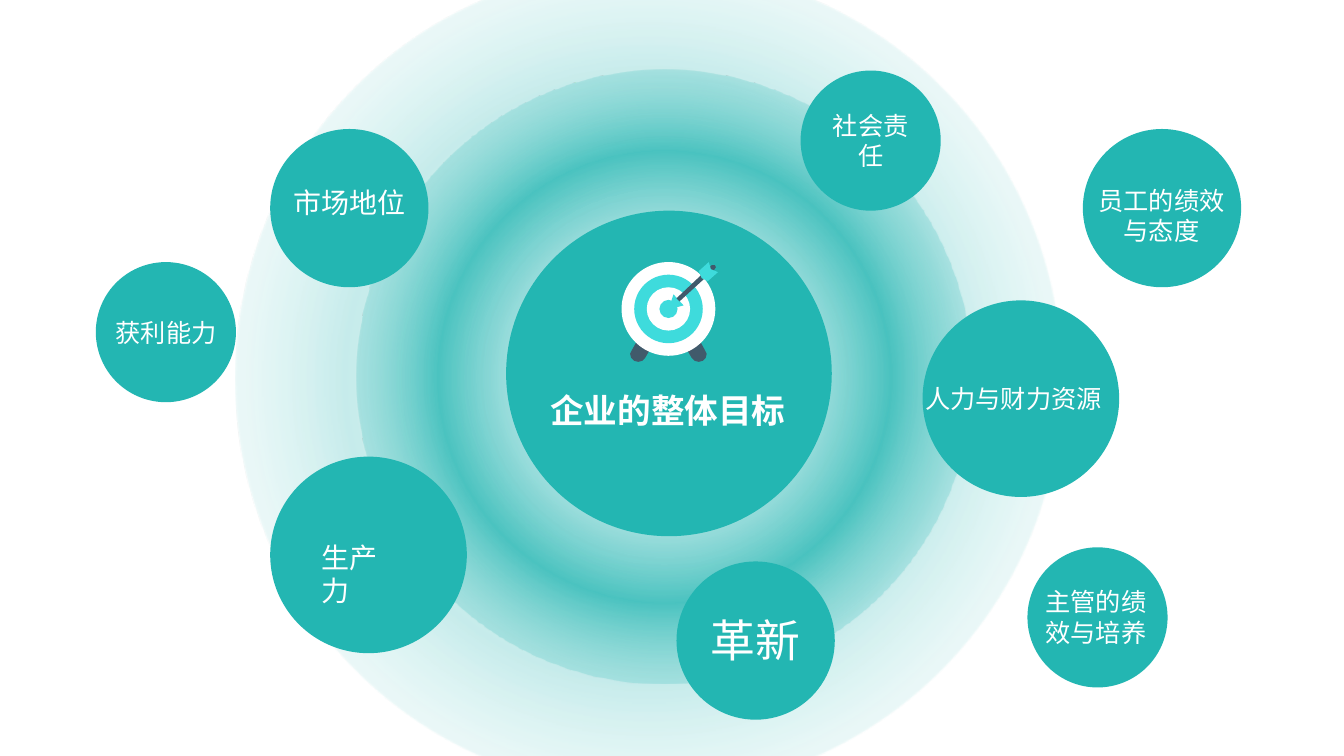
"""Build a slide of satellite goals around a company's overall objective."""
from dataclasses import dataclass
from typing import Optional

from pptx import Presentation
from pptx.dml.color import RGBColor
from pptx.enum.shapes import MSO_SHAPE
from pptx.enum.text import MSO_ANCHOR, MSO_AUTO_SIZE, PP_ALIGN
from pptx.oxml import parse_xml
from pptx.oxml.ns import nsdecls, qn
from pptx.shapes.autoshape import Shape
from pptx.shapes.shapetree import GroupShapes, SlideShapes
from pptx.text.text import TextFrame
from pptx.util import Inches, Pt

OVAL = MSO_SHAPE.OVAL
MIDDLE = MSO_ANCHOR.MIDDLE
FIT_SHAPE = MSO_AUTO_SIZE.SHAPE_TO_FIT_TEXT
LEFT, CENTER = PP_ALIGN.LEFT, PP_ALIGN.CENTER

Point = tuple[float, float]
Box = tuple[float, float, float, float]


@dataclass(frozen=True)
class Theme:
    """Colours, font and type sizes of the slide."""
    teal: str = "23B6B2"
    aqua: str = "3EDBDC"
    slate: str = "415A6B"
    white: str = "FFFFFF"
    mist: str = "F7FAFD"
    font: str = "Noto Sans CJK SC"
    title: int = 24
    accent: int = 32
    label: int = 20
    small: int = 18
    line_height: float = 1.2


THEME = Theme()


@dataclass(frozen=True)
class Halo:
    """A glowing ring behind the goals."""
    left: float
    top: float
    diameter: float
    glow: int


@dataclass(frozen=True)
class Goal:
    """A circle and its label, placed inside it when no box is given."""
    text: str
    left: float
    top: float
    diameter: float
    size: int
    box: Optional[Box] = None
    wrap: bool = False
    align: PP_ALIGN = LEFT
    bold: bool = False


HALOS = [Halo(2.34, -0.34, 8.19, 25), Halo(3.54, 0.69, 6.09, 78)]

GOALS = [
    Goal("企业的整体目标", 5.02, 2.09, 3.23, THEME.title, (5.36, 3.82, 2.54, 0.5), bold=True),
    Goal("市场地位", 2.68, 1.28, 1.57, THEME.label, (2.81, 1.79, 1.31, 0.44)),
    Goal("革新", 6.71, 5.57, 1.57, THEME.accent, (6.95, 6.03, 1.09, 0.64)),
    Goal("生产力", 2.68, 4.53, 1.95, THEME.label, (3.09, 5.31, 1.03, 0.44)),
    Goal("人力与财力资源", 9.15, 2.98, 1.95, THEME.small, (9.08, 3.75, 2.1, 0.4), wrap=True),
    Goal("社会责任", 7.94, 0.7, 1.39, THEME.small, wrap=True, align=CENTER),
    Goal("获利能力", 0.95, 2.6, 1.39, THEME.small, (1.05, 3.1, 1.2, 0.4)),
    Goal("主管的绩效与培养", 10.19, 5.43, 1.39, THEME.small, (10.27, 5.77, 1.22, 0.71), wrap=True),
    Goal("员工的绩效与态度", 10.74, 1.28, 1.57, THEME.small, (10.79, 1.79, 1.46, 0.71),
         wrap=True, align=CENTER),
]

TARGET_X, TARGET_Y = 6.63, 3.065
TARGET_RINGS = [(0.93, THEME.white), (0.68, THEME.aqua), (0.43, THEME.white), (0.18, THEME.aqua)]
LEG = [(6.33, 3.59), (6.29, 3.58), (6.26, 3.55), (6.25, 3.51), (6.27, 3.47),
       (6.43, 3.18), (6.61, 3.18), (6.4, 3.55), (6.37, 3.58)]
DART_TIP = [(6.68, 2.92), (6.63, 3.07), (6.78, 3.03)]
DART_SHAFT = [(6.74, 2.99), (7.09, 2.67), (7.1, 2.65), (7.09, 2.63), (7.06, 2.63), (6.71, 2.96)]
DART_FLIGHT = [(6.96, 2.76), (7.02, 2.79), (7.12, 2.7), (7.05, 2.67), (7.03, 2.6), (6.93, 2.69)]


def paint(shape: Shape, color: str) -> None:
    """Give a shape a flat fill with no outline or shadow."""
    shape.fill.solid()
    shape.fill.fore_color.rgb = RGBColor.from_string(color)
    shape.line.fill.background()
    shape.shadow.inherit = False


def add_circle(shapes: SlideShapes | GroupShapes, left: float, top: float,
               diameter: float, color: str) -> Shape:
    """Draw a plain circle."""
    circle = shapes.add_shape(OVAL, Inches(left), Inches(top), Inches(diameter), Inches(diameter))
    paint(circle, color)
    return circle


def add_halo(shapes: SlideShapes, halo: Halo) -> None:
    """Draw a ring with a radial, partly transparent gradient."""
    ring = add_circle(shapes, halo.left, halo.top, halo.diameter, THEME.teal)
    stops = [(0, THEME.mist, 12), (52, THEME.teal, halo.glow), (97, THEME.white, 0)]
    stop_xml = "".join(
        f'<a:gs pos="{pos * 1000}"><a:srgbClr val="{color}">'
        f'<a:alpha val="{alpha * 1000}"/></a:srgbClr></a:gs>'
        for pos, color, alpha in stops)
    gradient = parse_xml(
        f'<a:gradFill {nsdecls("a")} rotWithShape="1"><a:gsLst>{stop_xml}</a:gsLst>'
        '<a:path path="circle"><a:fillToRect l="50000" t="50000" r="50000" b="50000"/></a:path>'
        '</a:gradFill>')
    properties = ring.element.spPr
    properties.replace(properties.find(qn("a:solidFill")), gradient)


def write_label(frame: TextFrame, goal: Goal) -> None:
    """Write and style a goal's label."""
    frame.word_wrap = goal.wrap
    paragraph = frame.paragraphs[0]
    paragraph.alignment = goal.align
    paragraph.line_spacing = Pt(goal.size * THEME.line_height)
    run = paragraph.add_run()
    run.text = goal.text
    font = run.font
    font.name = THEME.font
    font.size = Pt(goal.size)
    font.bold = goal.bold
    font.color.rgb = RGBColor.from_string(THEME.white)
    latin = run.font._element.find(qn("a:latin"))
    latin.addnext(parse_xml(f'<a:ea {nsdecls("a")} typeface="{THEME.font}"/>'))


def add_goal(shapes: SlideShapes, goal: Goal) -> None:
    """Draw a goal's circle and its label."""
    circle = add_circle(shapes, goal.left, goal.top, goal.diameter, THEME.teal)
    if goal.box is None:
        frame = circle.text_frame
        frame.vertical_anchor = MIDDLE
    else:
        frame = shapes.add_textbox(*map(Inches, goal.box)).text_frame
        frame.auto_size = FIT_SHAPE
    write_label(frame, goal)


def add_outline(shapes: GroupShapes, points: list[Point], color: str) -> None:
    """Draw a closed filled outline."""
    start, *rest = [(Inches(x), Inches(y)) for x, y in points]
    builder = shapes.build_freeform(*start)
    builder.add_line_segments(rest, close=True)
    paint(builder.convert_to_shape(), color)


def add_target(shapes: SlideShapes) -> None:
    """Draw the target on its legs, with a dart in the bullseye."""
    parts = shapes.add_group_shape().shapes
    mirrored_leg = [(2 * TARGET_X - x, y) for x, y in LEG]
    for leg in (LEG, mirrored_leg):
        add_outline(parts, leg, THEME.slate)
    for diameter, color in TARGET_RINGS:
        add_circle(parts, TARGET_X - diameter / 2, TARGET_Y - diameter / 2, diameter, color)
    add_outline(parts, DART_TIP, THEME.aqua)
    add_outline(parts, DART_SHAFT, THEME.slate)
    add_outline(parts, DART_FLIGHT, THEME.aqua)


def main() -> None:
    """Build and save the slide."""
    deck = Presentation()
    deck.slide_width, deck.slide_height = Inches(13.33), Inches(7.5)
    shapes = deck.slides.add_slide(deck.slide_layouts[6]).shapes
    for halo in HALOS:
        add_halo(shapes, halo)
    for goal in GOALS:
        add_goal(shapes, goal)
    add_target(shapes)
    deck.save("out.pptx")


if __name__ == "__main__":
    main()
